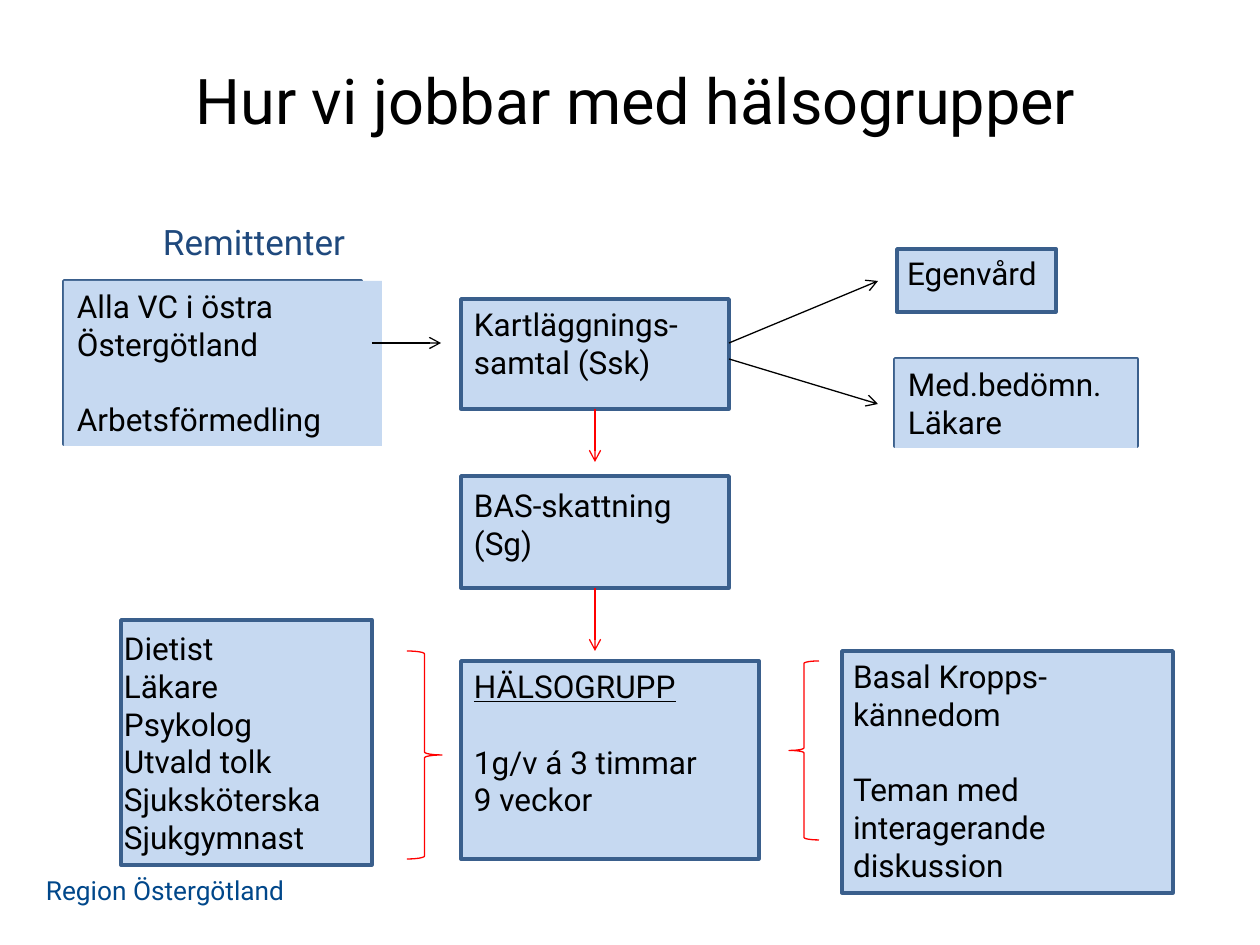
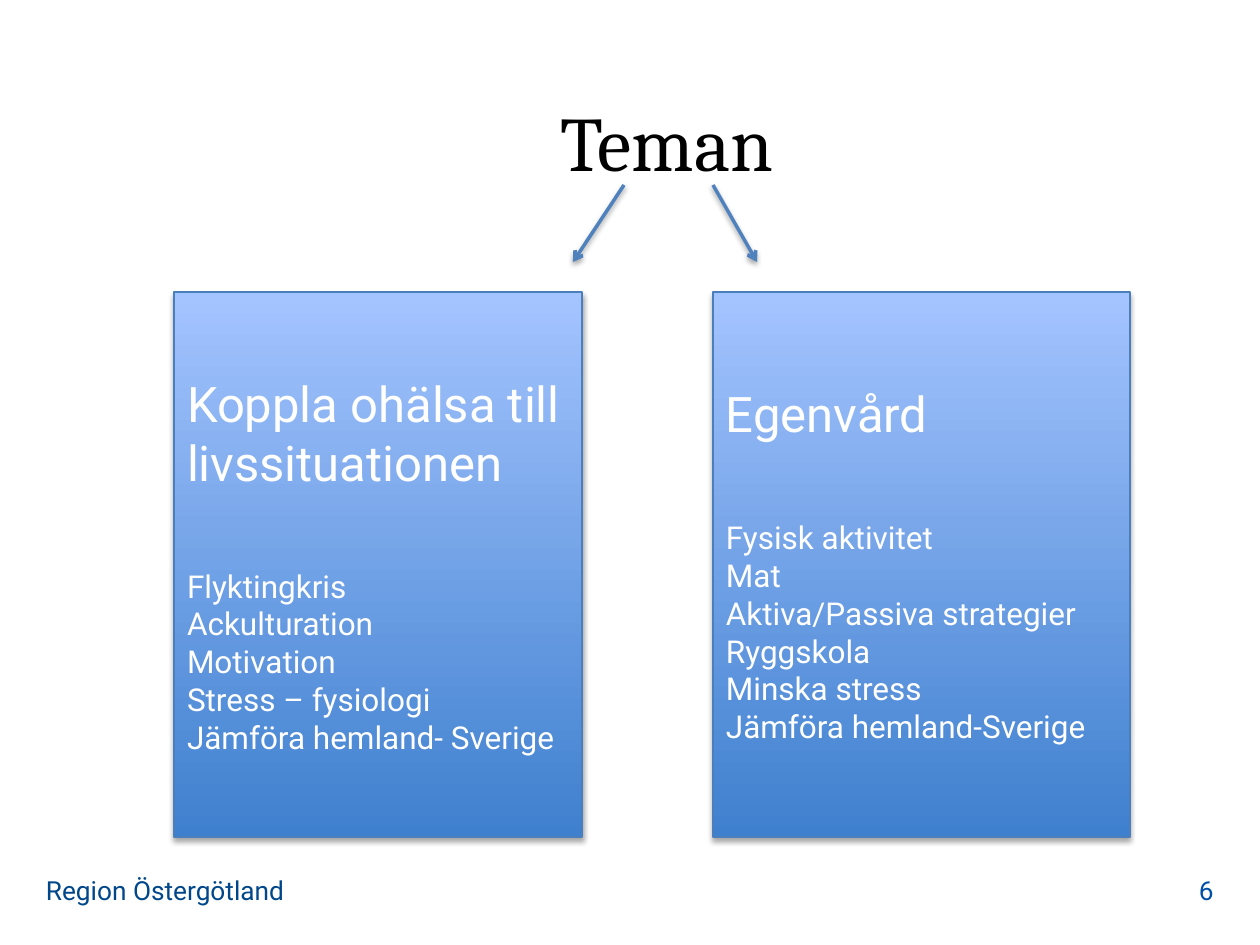
from lxml.etree import SubElement
from pptx import Presentation
from pptx.dml.color import RGBColor
from pptx.enum.shapes import MSO_CONNECTOR, MSO_SHAPE
from pptx.enum.text import MSO_ANCHOR, PP_ALIGN
from pptx.oxml.ns import qn
from pptx.util import Pt

PX = 914400 / 126
LINE = 21.6  # height of one 18 pt line, in points
HEX = {
    "black": "000000", "white": "FFFFFF", "navy": "1F497D",
    "foot": "00478A", "page": "0050A5", "pale": "C6D9F1",
    "blue": "4F81BD", "edge": "3A5F8C", "red": "FF0000",
    "rim": "4B7EBC", "deep": "3F80CE", "light": "A4C4FF",
}
RGB = {name: RGBColor.from_string(code) for name, code in HEX.items()}


def block(slide, area, text="", size=18, first=None, color="black", font="Roboto",
          align=PP_ALIGN.LEFT, anchor=MSO_ANCHOR.TOP, under=False, gap=None,
          inset=(13, 6), fill=None, edge=None, thick=2):
    """Add text, in a rectangle if a fill is given; gap is (line index, points)."""
    area = [round(n * PX) for n in area]
    if fill:
        shape = slide.shapes.add_shape(MSO_SHAPE.RECTANGLE, *area)
        shape.shadow.inherit = False
        if len(fill) == 2:
            shape.fill.gradient()
            shape.fill.gradient_angle = 90
            for stop, name in zip(shape.fill.gradient_stops, fill):
                stop.color.rgb = RGB[name]
        else:
            shape.fill.solid()
            shape.fill.fore_color.rgb = RGB[fill[0]]
        if edge:
            shape.line.color.rgb = RGB[edge]
            shape.line.width = Pt(thick)
        else:
            shape.line.fill.background()
    else:
        shape = slide.shapes.add_textbox(*area)
    frame = shape.text_frame
    frame.word_wrap = True
    frame.vertical_anchor = anchor
    frame.margin_left, frame.margin_top = [round(n * PX) for n in inset]
    frame.text = text
    for i, para in enumerate(frame.paragraphs):
        para.alignment = align
        if gap and i == gap[0]:
            para.space_before = Pt(gap[1])
        para.font.size = Pt(first if first and i == 0 else size)
        para.font.name = font
        para.font.color.rgb = RGB[color]
        para.font.underline = under and i == 0
    return shape


def link(slide, ends, color, thick=0.75):
    """Add an arrow without shadow."""
    arrow = slide.shapes.add_connector(
        MSO_CONNECTOR.STRAIGHT, *[round(n * PX) for n in ends])
    arrow.line.color.rgb = RGB[color]
    arrow.line.width = Pt(thick)
    props = arrow._element.spPr
    SubElement(props.find(qn("a:ln")), qn("a:tailEnd"), type="arrow")
    SubElement(props, qn("a:effectLst"))
    return arrow


deck = Presentation()
deck.slide_width = round(1260 * PX)
deck.slide_height = round(945 * PX)
work, themes = [deck.slides.add_slide(deck.slide_layouts[6]) for _ in range(2)]

# Shared footer
for slide in (work, themes):
    block(slide, (33, 868, 464, 44), "Region Östergötland", size=15, color="foot")

# Slide 1: title and heading
block(work, (25, 56, 1221, 90), "Hur vi jobbar med hälsogrupper", size=36,
      align=PP_ALIGN.CENTER)
block(work, (150, 214, 300, 56), "Remittenter", size=20, color="navy")

# Outlined backs, partly covered by unlined text panels
backs = [
    ((64, 281, 297, 163), (64, 281, 318, 165),
     "Alla VC i östra Östergötland\nArbetsförmedling", (1, LINE)),
    ((895, 359, 242, 87), (895, 359, 242, 89), "Med.bedömn.\nLäkare", None),
]
for back, front, text, gap in backs:
    block(work, back, fill=["blue"], edge="edge")
    block(work, front, text, gap=gap, fill=["pale"])

# Outlined steps
steps = [
    ((461, 299, 268, 110), "Kartläggnings-\nsamtal (Ssk)", {}),
    ((897, 249, 159, 63), "Egenvård", {"inset": (10, 5)}),
    ((461, 476, 268, 112), "BAS-skattning (Sg)", {"inset": (13, 10)}),
    ((461, 661, 298, 198), "HÄLSOGRUPP\n1g/v á 3 timmar\n9 veckor",
     {"under": True, "gap": (1, LINE)}),
    ((121, 620, 251, 245),
     "Dietist\nLäkare\nPsykolog\nUtvald tolk\nSjuksköterska\nSjukgymnast",
     {"inset": (3, 9)}),
    ((842, 651, 331, 242),
     "Basal Kropps-kännedom\nTeman med interagerande diskussion",
     {"inset": (11, 6), "gap": (1, LINE)}),
]
for area, text, style in steps:
    block(work, area, text, fill=["pale"], edge="edge", **style)

# Flow arrows
for ends in [(372, 343, 441, 343), (729, 343, 878, 281), (729, 359, 878, 404)]:
    link(work, ends, "black")
for ends in [(595, 409, 595, 462), (595, 588, 595, 651)]:
    link(work, ends, "red")

# Braces around the health group
braces = [
    (MSO_SHAPE.RIGHT_BRACE, (407, 651, 35, 208)),
    (MSO_SHAPE.LEFT_BRACE, (789, 661, 30, 179)),
]
for kind, area in braces:
    brace = work.shapes.add_shape(kind, *[round(n * PX) for n in area])
    brace.shadow.inherit = False
    brace.fill.background()
    brace.line.color.rgb = RGB["red"]
    brace.line.width = Pt(0.75)

# Slide 2: page number and title
block(themes, (1157, 862, 69, 50), "6", size=15, color="page",
      align=PP_ALIGN.RIGHT, anchor=MSO_ANCHOR.BOTTOM)
block(themes, (247, 89, 839, 106), "Teman", size=44, font="Cambria",
      align=PP_ALIGN.CENTER)

# Theme panels and their arrows
panels = [
    ((174, 292, 408, 545),
     "Koppla ohälsa till livssituationen\nFlyktingkris\nAckulturation\n"
     "Motivation\nStress – fysiologi\nJämföra hemland- Sverige"),
    ((713, 292, 417, 545),
     "Egenvård\nFysisk aktivitet\nMat\nAktiva/Passiva strategier\n"
     "Ryggskola\nMinska stress\nJämföra hemland-Sverige"),
]
raised = [
    block(themes, area, text, first=28, color="white", gap=(1, 2 * LINE),
          anchor=MSO_ANCHOR.MIDDLE, fill=["deep", "light"], edge="rim", thick=0.75)
    for area, text in panels
]
for ends in [(624, 185, 573, 262), (713, 185, 757, 262)]:
    raised.append(link(themes, ends, "blue", 2))

# Soft shadow below panels and arrows
for shape in raised:
    effects = shape._element.spPr.find(qn("a:effectLst"))
    shadow = SubElement(effects, qn("a:outerShdw"), blurRad=str(Pt(3.1)),
                        dist=str(Pt(1.8)), dir="5400000", rotWithShape="0")
    tint = SubElement(shadow, qn("a:srgbClr"), val=HEX["black"])
    SubElement(tint, qn("a:alpha"), val="35000")

deck.save("out.pptx")
